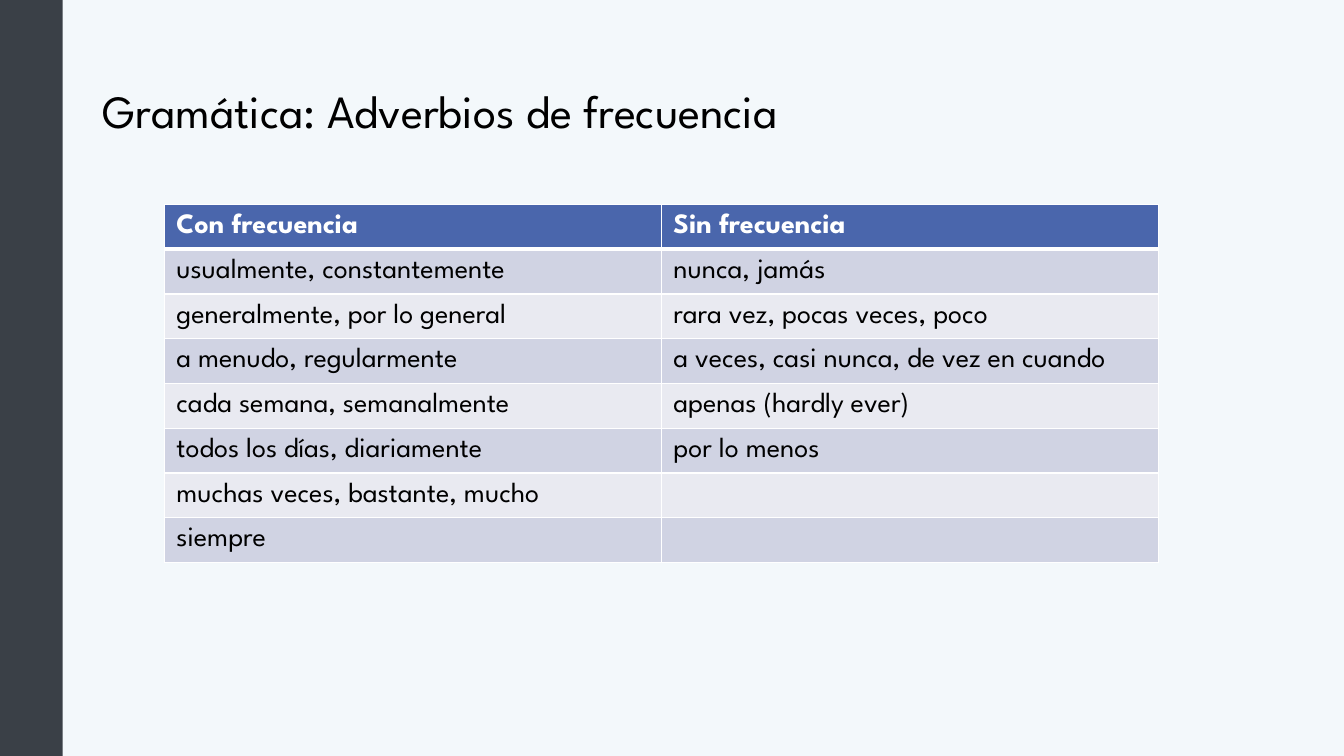
from dataclasses import dataclass

from lxml.etree import SubElement
from pptx import Presentation
from pptx.dml.color import RGBColor
from pptx.enum.shapes import MSO_SHAPE
from pptx.enum.text import MSO_ANCHOR
from pptx.oxml.ns import qn
from pptx.slide import Slide
from pptx.table import _Cell
from pptx.text.text import TextFrame
from pptx.util import Inches, Pt


@dataclass(frozen=True)
class Theme:
    font: str = "League Spartan"
    background: str = "F1F7FB"
    background_alpha: int = 80
    bar: str = "3A4047"
    header: str = "4A66AC"
    bands: tuple[str, str] = ("D0D3E3", "E9EAF1")
    border: str = "FFFFFF"
    text: str = "000000"
    header_text: str = "FFFFFF"
    title_size: int = 33
    table_size: int = 20
    border_width: int = 1
    header_rule: int = 3


@dataclass(frozen=True)
class AdverbRow:
    frequent: str
    infrequent: str = ""


THEME = Theme()
TITLE = "Gramática: Adverbios de frecuencia"
ROWS = [
    AdverbRow("Con frecuencia", "Sin frecuencia"),
    AdverbRow("usualmente, constantemente", "nunca, jamás"),
    AdverbRow("generalmente, por lo general", "rara vez, pocas veces, poco"),
    AdverbRow("a menudo, regularmente", "a veces, casi nunca, de vez en cuando"),
    AdverbRow("cada semana, semanalmente", "apenas (hardly ever)"),
    AdverbRow("todos los días, diariamente", "por lo menos"),
    AdverbRow("muchas veces, bastante, mucho"),
    AdverbRow("siempre"),
]
TABLE_WIDTH = Inches(9.86)
TABLE_HEIGHT = Inches(3.55)
CELL_FORMAT = {
    "margin_left": Inches(0.12),
    "margin_right": Inches(0.12),
    "margin_top": Inches(0.05),
    "margin_bottom": Inches(0.05),
    "vertical_anchor": MSO_ANCHOR.MIDDLE,
}


def rgb(value: str) -> RGBColor:
    return RGBColor.from_string(value)


def write(tf: TextFrame, text: str, size: int, color: str, bold: bool = False) -> None:
    r = tf.paragraphs[0].add_run()
    r.text = text
    for name, value in {"name": THEME.font, "size": Pt(size), "bold": bold}.items():
        setattr(r.font, name, value)
    r.font.color.rgb = rgb(color)


def paint_background(slide: Slide) -> None:
    fill = slide.background.fill
    fill.solid()
    fill.fore_color.rgb = rgb(THEME.background)
    color = next(slide.element.iter(qn("a:srgbClr")))
    SubElement(color, qn("a:alpha"), val=str(THEME.background_alpha * 1000))


def add_side_bar(slide: Slide) -> None:
    sp = slide.shapes.add_shape(
        MSO_SHAPE.RECTANGLE, Inches(-3.48), Inches(3.42), Inches(7.56), Inches(0.64)
    )
    sp.rotation = 90
    sp.shadow.inherit = False
    sp.fill.solid()
    sp.fill.fore_color.rgb = rgb(THEME.bar)
    sp.line.fill.background()


def add_title(slide: Slide) -> None:
    tf = slide.shapes.add_textbox(
        Inches(0.92), Inches(0.4), Inches(11.5), Inches(1.45)
    ).text_frame
    tf.word_wrap = True
    tf.vertical_anchor = MSO_ANCHOR.MIDDLE
    tf.paragraphs[0].line_spacing = 0.9
    write(tf, TITLE, THEME.title_size, THEME.text)


def add_borders(cell: _Cell, row: int) -> None:
    """Draw all four edges, with a heavier rule below the header row."""
    heavy_edge = {0: "B", 1: "T"}.get(row)
    for edge in "LRTB":
        width = THEME.header_rule if edge == heavy_edge else THEME.border_width
        ln = SubElement(cell._tc.get_or_add_tcPr(), qn(f"a:ln{edge}"), w=str(Pt(width)))
        SubElement(SubElement(ln, qn("a:solidFill")), qn("a:srgbClr"), val=THEME.border)


def fill_cell(cell: _Cell, row: int, text: str) -> None:
    header = row == 0
    add_borders(cell, row)
    cell.fill.solid()
    cell.fill.fore_color.rgb = rgb(THEME.header if header else THEME.bands[(row - 1) % 2])
    for name, value in CELL_FORMAT.items():
        setattr(cell, name, value)
    if text:
        color = THEME.header_text if header else THEME.text
        write(cell.text_frame, text, THEME.table_size, color, header)


def add_adverb_table(slide: Slide) -> None:
    table = slide.shapes.add_table(
        len(ROWS), 2, Inches(1.63), Inches(2.03), TABLE_WIDTH, TABLE_HEIGHT
    ).table
    for i, row in enumerate(ROWS):
        for j, text in enumerate((row.frequent, row.infrequent)):
            fill_cell(table.cell(i, j), i, text)


def main() -> None:
    prs = Presentation()
    prs.slide_width, prs.slide_height = Inches(13.33), Inches(7.5)
    slide = prs.slides.add_slide(prs.slide_layouts[6])
    paint_background(slide)
    add_side_bar(slide)
    add_title(slide)
    add_adverb_table(slide)
    prs.save("out.pptx")


if __name__ == "__main__":
    main()
